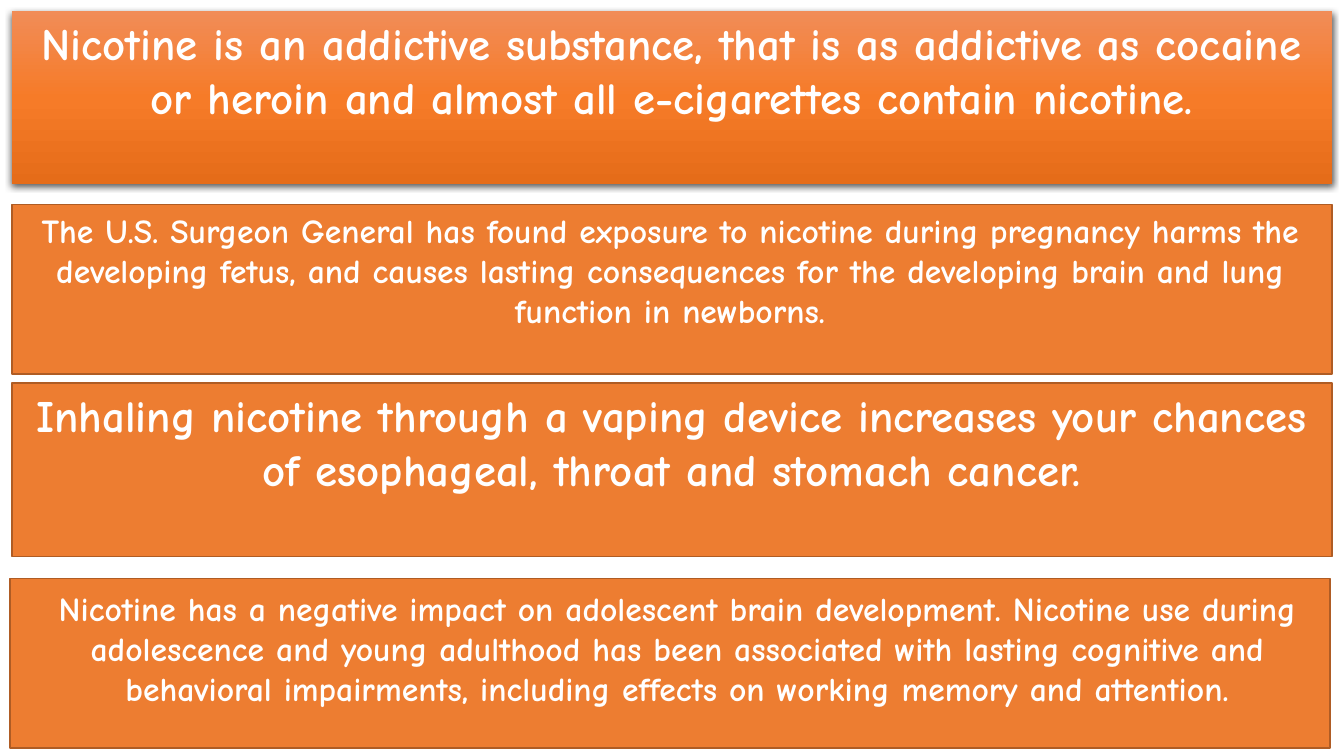
from copy import deepcopy

from lxml import etree
from pptx import Presentation
from pptx.dml.color import RGBColor
from pptx.enum import shapes, text
from pptx.oxml.ns import qn
from pptx.util import Inches, Pt

FONT = "Comic Neue"
WHITE = RGBColor(0xFF, 0xFF, 0xFF)
ORANGE = RGBColor(0xED, 0x7D, 0x31)
BROWN = RGBColor(0xAF, 0x5C, 0x24)
GRADIENT = [
    (0, RGBColor(0xF1, 0x8C, 0x57)),
    (0.5, RGBColor(0xF6, 0x7B, 0x28)),
    (1, RGBColor(0xE5, 0x6C, 0x19)),
]

ADDICTION = ("Nicotine is an addictive substance, that is as addictive as cocaine "
             "or heroin and almost all e-cigarettes contain nicotine.")
PREGNANCY = ("The U.S. Surgeon General has found exposure to nicotine during pregnancy "
             "harms the developing fetus, and causes lasting consequences for the "
             "developing brain and lung function in newborns.")
CANCER = ("Inhaling nicotine through a vaping device increases your chances of "
          "esophageal, throat and stomach cancer.")
BRAIN = ("Nicotine has a negative impact on adolescent brain development. Nicotine use "
         "during adolescence and young adulthood has been associated with lasting "
         "cognitive and behavioral impairments, including effects on working memory "
         "and attention.")

# left, top, width, height in inches
PREGNANCY_PANEL = (0.12, 2.03, 13.09, 1.68)
BRAIN_PANEL = (0.1, 5.74, 13.09, 1.68)
ADDICTION_PANEL = (0.12, 0.11, 13.09, 1.72)
CANCER_PANEL = (0.12, 3.8, 13.09, 1.72)
PREGNANCY_TEXT = (0.1, 2.03, 13.09, 1.31)
BRAIN_TEXT = (0.19, 5.78, 13.05, 1.72)


def write(shape, wording, size):
    frame = shape.text_frame
    frame.word_wrap = True
    frame.auto_size = text.MSO_AUTO_SIZE.NONE
    frame.vertical_anchor = text.MSO_ANCHOR.TOP
    paragraph = frame.paragraphs[0]
    paragraph.alignment = text.PP_ALIGN.CENTER
    run = paragraph.add_run()
    run.text = wording
    run.font.name = FONT
    run.font.size = Pt(size)
    run.font.bold = True
    run.font.color.rgb = WHITE


def add_panel(slide, box):
    panel = slide.shapes.add_shape(shapes.MSO_SHAPE.RECTANGLE, *map(Inches, box))
    panel.shadow.inherit = False
    panel.fill.solid()
    panel.fill.fore_color.rgb = ORANGE
    panel.line.color.rgb = BROWN
    panel.line.width = Pt(1)
    return panel


def raise_panel(panel):
    """Give the panel a vertical gradient and a soft shadow instead of an outline."""
    panel.line.fill.background()
    panel.fill.gradient()
    panel.fill.gradient_angle = 270
    stop_list = panel.element.find(".//" + qn("a:gsLst"))
    stop_list.append(deepcopy(stop_list[-1]))
    for stop, (position, color) in zip(panel.fill.gradient_stops, GRADIENT):
        stop.position = position
        stop.color.rgb = color

    effects = panel.element.find(".//" + qn("a:effectLst"))
    shadow = etree.SubElement(effects, qn("a:outerShdw"), blurRad=str(Pt(4.5)),
                              dist=str(Pt(1.5)), dir="5400000", rotWithShape="0")
    color = etree.SubElement(shadow, qn("a:srgbClr"), val="000000")
    etree.SubElement(color, qn("a:alpha"), val="63000")


def main():
    presentation = Presentation()
    presentation.slide_width = Inches(13.33)
    presentation.slide_height = Inches(7.5)
    slide = presentation.slides.add_slide(presentation.slide_layouts[6])

    add_panel(slide, PREGNANCY_PANEL)
    add_panel(slide, BRAIN_PANEL)
    addiction = add_panel(slide, ADDICTION_PANEL)
    raise_panel(addiction)
    write(addiction, ADDICTION, size=32)
    write(slide.shapes.add_textbox(*map(Inches, PREGNANCY_TEXT)), PREGNANCY, size=24)
    write(add_panel(slide, CANCER_PANEL), CANCER, size=32)
    write(slide.shapes.add_textbox(*map(Inches, BRAIN_TEXT)), BRAIN, size=24)

    presentation.save("out.pptx")


if __name__ == "__main__":
    main()
